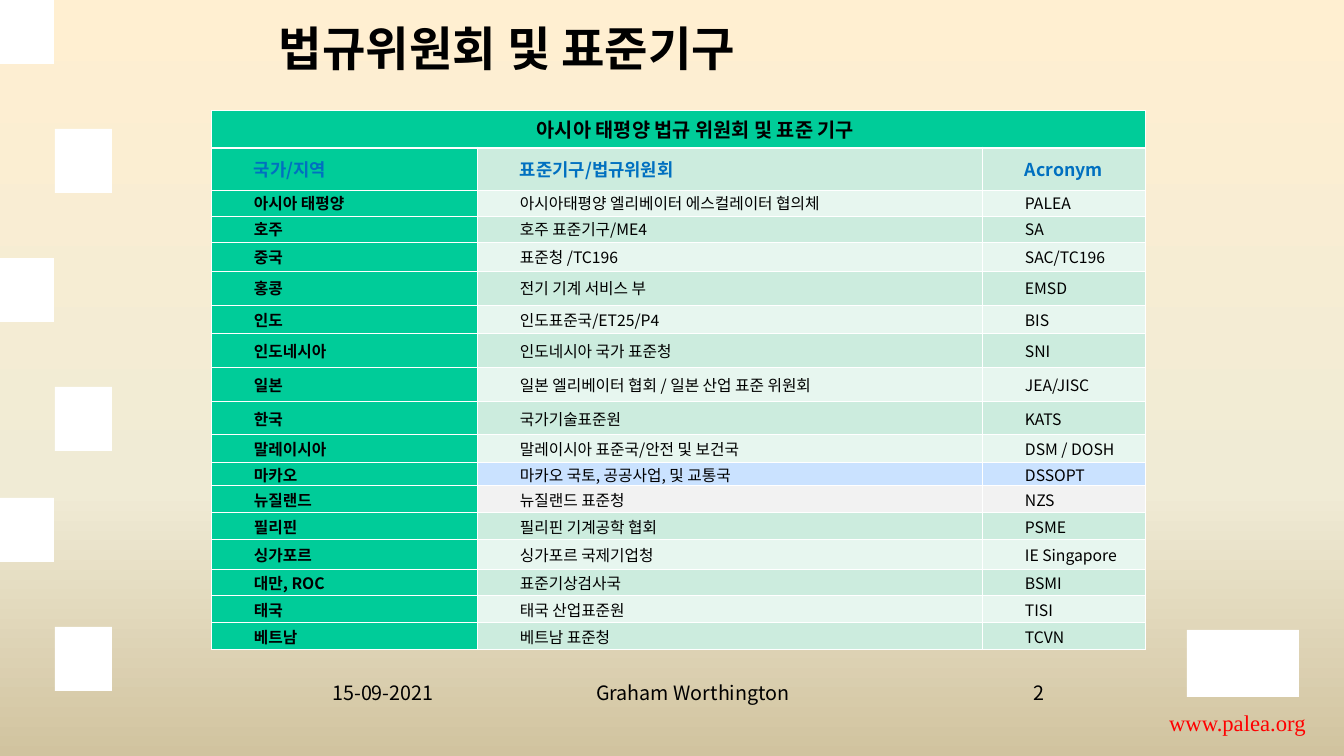
from dataclasses import dataclass

from lxml.etree import SubElement
from pptx import Presentation
from pptx.dml.color import RGBColor as RGB
from pptx.enum.shapes import MSO_SHAPE as SHAPE
from pptx.enum.text import MSO_ANCHOR as ANCHOR, MSO_AUTO_SIZE as AUTO, PP_ALIGN as ALIGN
from pptx.oxml.ns import qn
from pptx.util import Pt


@dataclass(frozen=True)
class Theme:
    """Colours, fonts and type sizes of the slide."""
    sans: str = "Noto Sans CJK KR"
    serif: str = "Times New Roman"
    black: str = "000000"
    white: str = "FFFFFF"
    red: str = "FF0000"
    blue: str = "0070C0"
    green: str = "00CC99"
    mint: str = "CCECDE"
    pale: str = "E7F6EF"
    sky: str = "CAE2FF"
    grey: str = "F2F2F2"
    backdrop: tuple = ((0, "FFEFD1"), (65, "F0EBD5"), (100, "D1C39F"))
    title: int = 48
    link: int = 23
    banner: int = 20
    footer: int = 20
    header: int = 18
    body: int = 16


T = Theme()
EMU_PER_PX = 12897
COLS = (266, 505, 163)
ROWS = (38, 42, 26, 26, 29, 34, 29, 34, 34, 33, 28, 23, 27, 27, 30, 26, 27, 27)
BANNER = "아시아 태평양 법규 위원회 및 표준 기구"
HEADER = ("국가/지역", "표준기구/법규위원회", "Acronym")
BODIES = (
    ("아시아 태평양", "아시아태평양 엘리베이터 에스컬레이터 협의체", "PALEA"),
    ("호주", "호주 표준기구/ME4", "SA"),
    ("중국", "표준청 /TC196", "SAC/TC196"),
    ("홍콩", "전기 기계 서비스 부", "EMSD"),
    ("인도", "인도표준국/ET25/P4", "BIS"),
    ("인도네시아", "인도네시아 국가 표준청", "SNI"),
    ("일본", "일본 엘리베이터 협회 / 일본 산업 표준 위원회", "JEA/JISC"),
    ("한국", "국가기술표준원", "KATS"),
    ("말레이시아", "말레이시아 표준국/안전 및 보건국", "DSM / DOSH"),
    ("마카오", "마카오 국토, 공공사업, 및 교통국", "DSSOPT"),
    ("뉴질랜드", "뉴질랜드 표준청", "NZS"),
    ("필리핀", "필리핀 기계공학 협회", "PSME"),
    ("싱가포르", "싱가포르 국제기업청", "IE Singapore"),
    ("대만, ROC", "표준기상검사국", "BSMI"),
    ("태국", "태국 산업표준원", "TISI"),
    ("베트남", "베트남 표준청", "TCVN"),
)
SPECIAL_FILLS = {"마카오": T.sky, "뉴질랜드": T.grey}


def px(n):
    """Turn pixels into EMU."""
    return n * EMU_PER_PX


def write(p, text, size, color=T.black, bold=False, align=ALIGN.LEFT, font=T.sans):
    """Fill a paragraph and set its font for Latin and Korean letters."""
    p.text = text
    p.alignment = align
    f = p.font
    f.name, f.size, f.bold = font, Pt(size), bold
    f.color.rgb = RGB.from_string(color)
    latin = p._p.pPr.find(".//" + qn("a:latin"))
    ea = latin.makeelement(qn("a:ea"), {"typeface": font})
    latin.addnext(ea)


def set_frame(tf, dx, dy, anchor=ANCHOR.TOP):
    """Set wrapping, insets and anchor of a text frame."""
    tf.word_wrap = True
    tf.auto_size = AUTO.NONE
    tf.margin_left = tf.margin_right = px(dx)
    tf.margin_top = tf.margin_bottom = px(dy)
    tf.vertical_anchor = anchor


def paint_background(s):
    """Lay the vertical three-stop gradient."""
    fill = s.background.fill
    fill.gradient()
    fill.gradient_angle = 270
    stops = s._element.find(".//" + qn("a:gsLst"))
    stops.clear()
    for pos, color in T.backdrop:
        gs = SubElement(stops, qn("a:gs"), pos=str(pos * 1000))
        SubElement(gs, qn("a:srgbClr"), val=color)


def add_block(s, x, y, w, h):
    """Add a plain white rectangle."""
    sp = s.shapes.add_shape(SHAPE.RECTANGLE, px(x), px(y), px(w), px(h))
    sp.shadow.inherit = False
    sp.fill.solid()
    sp.fill.fore_color.rgb = RGB.from_string(T.white)
    sp.line.fill.background()


def add_label(s, x, y, w, h, text, size, **style):
    """Add a one-line text box."""
    tf = s.shapes.add_textbox(px(x), px(y), px(w), px(h)).text_frame
    set_frame(tf, 10, 5)
    write(tf.paragraphs[0], text, size, **style)


def set_title(s, text):
    """Place and format the title placeholder."""
    sp = s.shapes.title
    sp.left, sp.top, sp.width, sp.height = px(269), px(2), px(876), px(91)
    set_frame(sp.text_frame, 10, 5, ANCHOR.MIDDLE)
    write(sp.text_frame.paragraphs[0], text, T.title, bold=True)


def style_cell(cell, fill, top=1, bottom=1):
    """Set fill, insets and white borders of a cell."""
    cell.fill.solid()
    cell.fill.fore_color.rgb = RGB.from_string(fill)
    cell.margin_left = cell.margin_right = px(8)
    cell.margin_top = cell.margin_bottom = 0
    cell.vertical_anchor = ANCHOR.MIDDLE
    tc_pr = cell._tc.get_or_add_tcPr()
    for i, (side, width) in enumerate(zip("LRTB", (1, 1, top, bottom))):
        ln = tc_pr.makeelement(qn(f"a:ln{side}"), {"w": str(Pt(width))})
        tc_pr.insert(i, ln)
        SubElement(SubElement(ln, qn("a:solidFill")), qn("a:srgbClr"), val=T.white)


def write_cell(cell, text, size, **style):
    """Write indented text into a cell."""
    p = cell.text_frame.paragraphs[0]
    p._p.get_or_add_pPr().set("marL", str(px(35)))
    write(p, text, size, **style)


def add_bodies_table(s):
    """Add the table of committees and standards bodies."""
    frame = s.shapes.add_table(len(ROWS), len(COLS), px(211), px(110), px(sum(COLS)), px(sum(ROWS)))
    table = frame.table
    table.horz_banding = False
    for col, w in zip(table.columns, COLS):
        col.width = px(w)
    for row, h in zip(table.rows, ROWS):
        row.height = px(h)

    for c in range(len(COLS)):
        style_cell(table.cell(0, c), T.green, bottom=3)
    table.cell(0, 0).merge(table.cell(0, len(COLS) - 1))
    write_cell(table.cell(0, 0), BANNER, T.banner, bold=True, align=ALIGN.CENTER)

    for c, text in enumerate(HEADER):
        cell = table.cell(1, c)
        style_cell(cell, T.mint if c else T.green, top=3)
        align = ALIGN.JUSTIFY if c < 2 else ALIGN.LEFT
        write_cell(cell, text, T.header, color=T.blue, bold=True, align=align)

    for r, body in enumerate(BODIES):
        band = SPECIAL_FILLS.get(body[0], T.mint if r % 2 else T.pale)
        for c, text in enumerate(body):
            cell = table.cell(r + 2, c)
            style_cell(cell, band if c else T.green)
            write_cell(cell, text, T.body, bold=c == 0)


def main():
    """Build the slide and save it."""
    prs = Presentation()
    prs.slide_width, prs.slide_height = px(1344), px(756)
    s = prs.slides.add_slide(prs.slide_layouts[5])
    paint_background(s)
    add_block(s, 1187, 630, 112, 67)
    for i, y in enumerate((0, 129, 258, 387, 498, 627)):
        x, w = (55, 57) if i % 2 else (0, 54)
        add_block(s, x, y, w, 64)
    add_label(s, 1131, 704, 213, 35, "www.palea.org", T.link,
              color=T.red, align=ALIGN.CENTER, font=T.serif)
    set_title(s, "법규위원회 및 표준기구")
    add_bodies_table(s)
    add_label(s, 303, 676, 160, 29, "15-09-2021", T.footer, align=ALIGN.CENTER)
    add_label(s, 563, 676, 260, 29, "Graham Worthington", T.footer, align=ALIGN.CENTER)
    add_label(s, 958, 676, 96, 29, "2", T.footer, align=ALIGN.RIGHT)
    prs.save("out.pptx")


if __name__ == "__main__":
    main()
